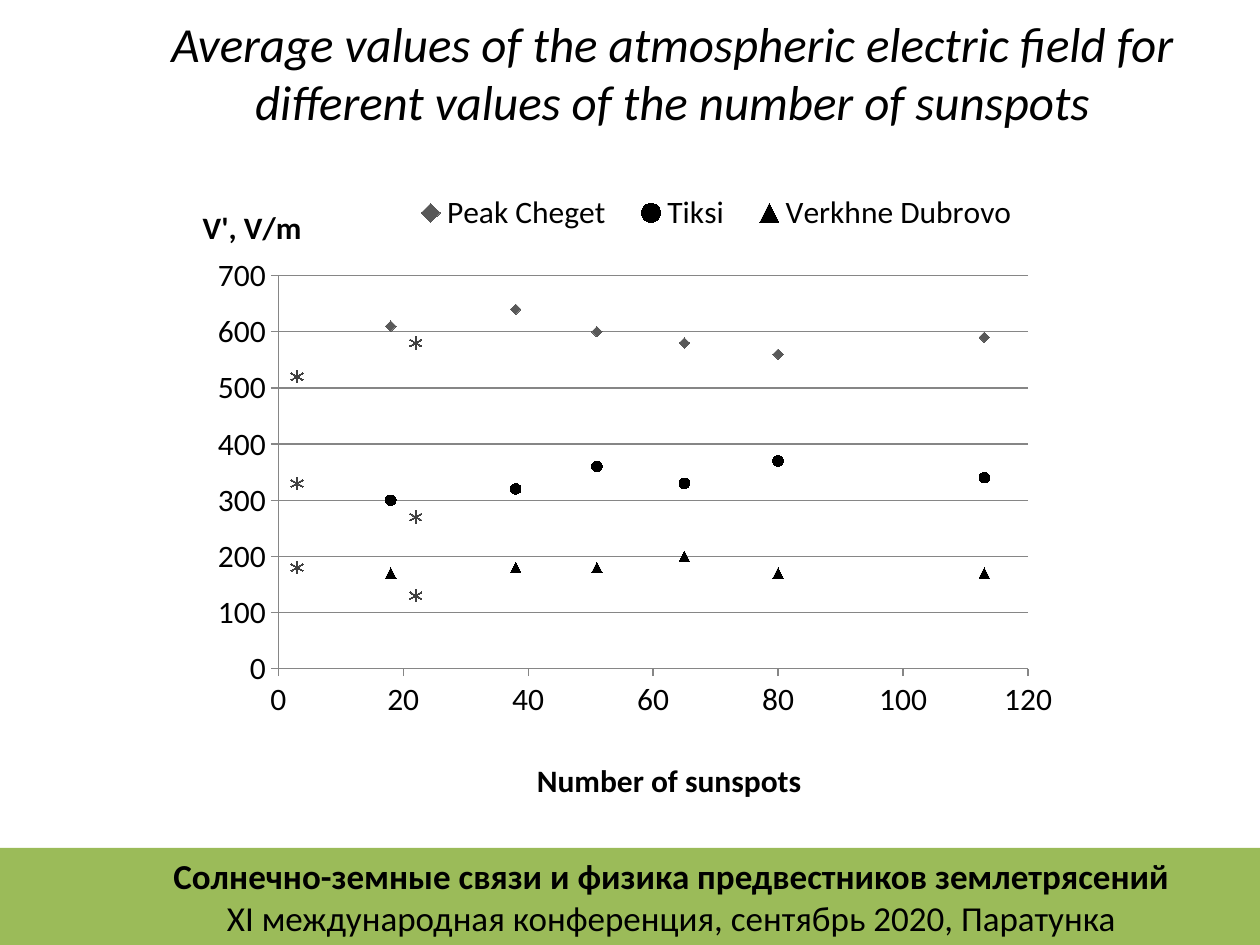
from lxml import etree
from pptx import Presentation
from pptx.chart.data import XyChartData
from pptx.dml.color import RGBColor
from pptx.enum.chart import XL_CHART_TYPE, XL_LEGEND_POSITION, XL_MARKER_STYLE, XL_TICK_MARK
from pptx.enum.shapes import MSO_SHAPE
from pptx.enum.text import MSO_ANCHOR, PP_ALIGN
from pptx.oxml.ns import qn
from pptx.util import Inches, Pt

SCATTER = XL_CHART_TYPE.XY_SCATTER
LEGEND_BOTTOM = XL_LEGEND_POSITION.BOTTOM
DIAMOND, CIRCLE = XL_MARKER_STYLE.DIAMOND, XL_MARKER_STYLE.CIRCLE
TRIANGLE, STAR = XL_MARKER_STYLE.TRIANGLE, XL_MARKER_STYLE.STAR
TICK_OUTSIDE = XL_TICK_MARK.OUTSIDE
RECTANGLE = MSO_SHAPE.RECTANGLE
CENTER, MIDDLE, TOP = PP_ALIGN.CENTER, MSO_ANCHOR.MIDDLE, MSO_ANCHOR.TOP

THEME = {
    "font": "Calibri", "text": "000000", "band": "9BBB59",
    "grid": "868686", "gray": "595959", "star": "404040",
    "title_size": 28, "footer_size": 20, "chart_size": 18,
}

TITLE = ("Average values of the atmospheric electric field for "
         "different values of the number of sunspots")
FOOTER = [
    ("Солнечно-земные связи и физика предвестников землетрясений", True),
    ("XI международная конференция, сентябрь 2020, Паратунка", False),
]
SUNSPOTS = [18, 38, 51, 65, 80, 113]
STAR_SUNSPOTS = [3, 22]
# name, x values, y values, marker, marker size, colour
SERIES = [
    ("Peak Cheget", SUNSPOTS, [610, 640, 600, 580, 560, 590], DIAMOND, 6, "gray"),
    ("Tiksi", SUNSPOTS, [300, 320, 360, 330, 370, 340], CIRCLE, 6, "text"),
    ("Verkhne Dubrovo", SUNSPOTS, [170, 180, 180, 200, 170, 170], TRIANGLE, 6, "text"),
    ("Series 4", STAR_SUNSPOTS, [520, 580], STAR, 7, "star"),
    ("Series 5", STAR_SUNSPOTS, [330, 270], STAR, 7, "star"),
    ("Series 6", STAR_SUNSPOTS, [180, 130], STAR, 7, "star"),
]
# title, maximum, major unit, title position as fractions of the chart
HORIZONTAL_AXIS = ("Number of sunspots", 120, 20, (0.39, 0.92))
VERTICAL_AXIS = ("V', V/m", 700, 100, (0.02, 0.04))
PLOT_LAYOUT = (0.11, 0.16, 0.83, 0.625)
LEGEND_LAYOUT = (0.24, 0.02, 0.71, 0.08)

TITLE_BOX = (1.22, 0.05, 8.23, 1.04)
CHART_BOX = (1.42, 1.39, 7.17, 5.04)
BAND_BOX = (0, 6.73, 10, 0.77)
FOOTER_BOX = (0.98, 6.73, 8.7, 0.77)


def color(name):
    return RGBColor.from_string(THEME[name])


def inches(box):
    return [Inches(value) for value in box]


def format_font(font, size, bold=False, italic=False):
    font.name, font.size = THEME["font"], Pt(size)
    font.bold, font.italic = bold, italic
    font.color.rgb = color("text")


def write_paragraph(paragraph, text, **font_format):
    paragraph.text = text
    paragraph.alignment = CENTER
    format_font(paragraph.runs[0].font, **font_format)


def set_layout(element, fractions, inner=False):
    """Place a chart part by x, y and optionally width, height fractions."""
    layout = element.find(qn("c:layout"))
    if layout is None:
        layout = etree.Element(qn("c:layout"))
        overlay = element.find(qn("c:overlay"))
        if overlay is None:
            element.insert(0, layout)
        else:
            overlay.addprevious(layout)
    for child in list(layout):
        layout.remove(child)
    manual = etree.SubElement(layout, qn("c:manualLayout"))
    settings = [("layoutTarget", "inner")] if inner else []
    settings += [("xMode", "edge"), ("yMode", "edge")]
    settings += zip("xywh", fractions)
    for tag, value in settings:
        etree.SubElement(manual, qn(f"c:{tag}")).set("val", str(value))


def format_axis(axis, title, maximum, unit, title_position):
    axis.minimum_scale, axis.maximum_scale, axis.major_unit = 0, maximum, unit
    axis.major_tick_mark = TICK_OUTSIDE
    axis.format.line.color.rgb = color("grid")
    format_font(axis.tick_labels.font, THEME["chart_size"])
    frame = axis.axis_title.text_frame
    write_paragraph(frame.paragraphs[0], title, size=THEME["chart_size"], bold=True)
    body = frame._txBody.find(qn("a:bodyPr"))
    body.set("rot", "0")
    body.set("vert", "horz")
    set_layout(axis.axis_title._element, title_position)


def format_legend(chart):
    chart.has_legend = True
    legend = chart.legend
    legend.position = LEGEND_BOTTOM
    legend.include_in_layout = False
    format_font(legend.font, THEME["chart_size"])
    hidden = [index for index, entry in enumerate(SERIES) if entry[3] == STAR]
    for position, index in enumerate(hidden, start=1):
        entry = etree.Element(qn("c:legendEntry"))
        etree.SubElement(entry, qn("c:idx")).set("val", str(index))
        etree.SubElement(entry, qn("c:delete")).set("val", "1")
        legend._element.insert(position, entry)
    set_layout(legend._element, LEGEND_LAYOUT)


def format_series(series, marker, size, color_name):
    series.format.line.fill.background()
    series.marker.style, series.marker.size = marker, size
    series.marker.format.line.color.rgb = color(color_name)
    if marker == STAR:
        series.marker.format.fill.background()
    else:
        series.marker.format.fill.solid()
        series.marker.format.fill.fore_color.rgb = color(color_name)


def add_scatter_chart(slide):
    data = XyChartData()
    for name, x_values, y_values, *_ in SERIES:
        series = data.add_series(name)
        for x, y in zip(x_values, y_values):
            series.add_data_point(x, y)
    chart = slide.shapes.add_chart(SCATTER, *inches(CHART_BOX), data).chart
    chart.has_title = False
    format_font(chart.font, THEME["chart_size"])
    plot = chart.plots[0]
    plot.vary_by_categories = False
    for series, (*_, marker, size, color_name) in zip(plot.series, SERIES):
        format_series(series, marker, size, color_name)
    format_axis(chart.category_axis, *HORIZONTAL_AXIS)
    format_axis(chart.value_axis, *VERTICAL_AXIS)
    chart.category_axis.has_major_gridlines = False
    chart.value_axis.has_major_gridlines = True
    chart.value_axis.major_gridlines.format.line.color.rgb = color("grid")
    format_legend(chart)
    set_layout(chart._chartSpace.find(".//" + qn("c:plotArea")), PLOT_LAYOUT, inner=True)


def add_title(slide):
    title = slide.shapes.title
    title.left, title.top, title.width, title.height = inches(TITLE_BOX)
    title.text_frame.vertical_anchor = MIDDLE
    write_paragraph(title.text_frame.paragraphs[0], TITLE,
                    size=THEME["title_size"], italic=True)


def add_footer(slide):
    band = slide.shapes.add_shape(RECTANGLE, *inches(BAND_BOX))
    band.shadow.inherit = False
    band.fill.solid()
    band.fill.fore_color.rgb = color("band")
    band.line.fill.background()
    frame = slide.shapes.add_textbox(*inches(FOOTER_BOX)).text_frame
    frame.word_wrap = True
    frame.vertical_anchor = TOP
    for index, (text, bold) in enumerate(FOOTER):
        paragraph = frame.add_paragraph() if index else frame.paragraphs[0]
        write_paragraph(paragraph, text, size=THEME["footer_size"], bold=bold)


def main():
    presentation = Presentation()
    presentation.slide_width, presentation.slide_height = Inches(10), Inches(7.5)
    slide = presentation.slides.add_slide(presentation.slide_layouts[5])
    add_footer(slide)
    add_title(slide)
    add_scatter_chart(slide)
    presentation.save("out.pptx")


if __name__ == "__main__":
    main()
